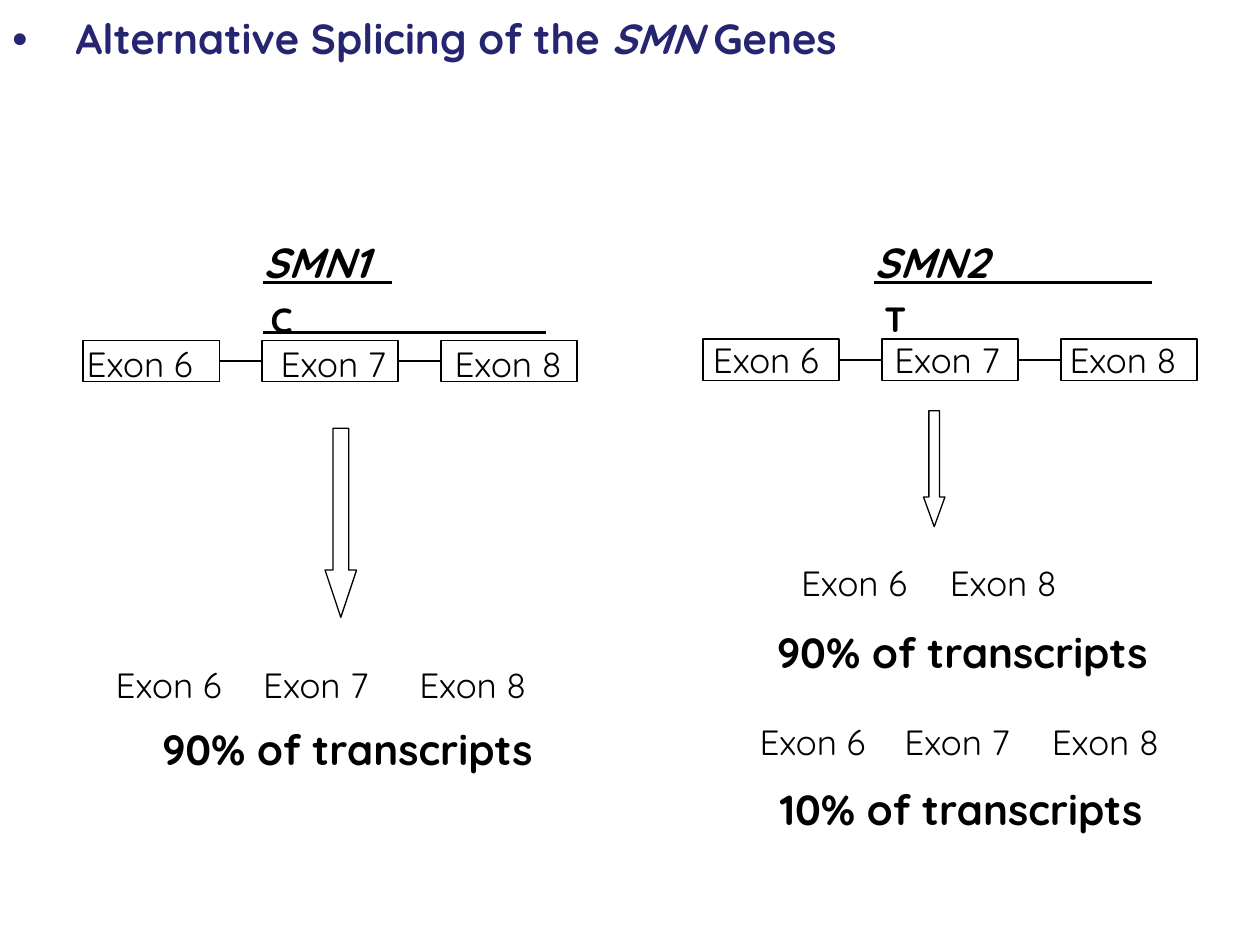
from lxml import etree
from pptx import Presentation
from pptx import util as u
from pptx.dml.color import RGBColor
from pptx.enum import shapes, text
from pptx.oxml.ns import qn

COLORS = {"title": "252571", "ink": "000000", "paper": "FFFFFF"}
FONT = "Quicksand"
COLS, ROWS = 100, 75
WIDTH, HEIGHT = u.Inches(10), u.Inches(7.5)

EXON_W, EXON_H, EXON_STEP = 10.8, 3.3, 14.2
EXON = {"size": 20}
STRONG = {"size": 24, "bold": True}
BASE = {"size": 20, "bold": True}
GENE = {"size": 24, "bold": True, "italic": True, "underline": True}


def grid(col, row):
    return round(col * WIDTH / COLS), round(row * HEIGHT / ROWS)


def box(col, row, cols, rows):
    return *grid(col, row), *grid(cols, rows)


def rgb(name):
    return RGBColor.from_string(COLORS[name])


def add_run(p, words, color="ink", **fmt):
    r = p.add_run()
    r.text = words
    r.font.name = FONT
    r.font.color.rgb = rgb(color)
    for name, value in fmt.items():
        setattr(r.font, name, u.Pt(value) if name == "size" else value)


def add_title(slide):
    sp = slide.shapes.title
    sp.left, sp.top, sp.width, sp.height = box(0, 0, 85, 6)
    tf = sp.text_frame
    tf.vertical_anchor = text.MSO_ANCHOR.MIDDLE
    tf.auto_size = text.MSO_AUTO_SIZE.NONE
    p = tf.paragraphs[0]
    p.alignment = text.PP_ALIGN.LEFT
    for words, italic in (("•\tAlternative Splicing of the ", False),
                          ("SMN ", True), ("Genes", False)):
        add_run(p, words, "title", size=24, bold=True, italic=italic)


def add_label(slide, words, col, row, cols, fmt):
    rows = 5 if fmt["size"] == 24 else 4.3
    tf = slide.shapes.add_textbox(*box(col, row, cols, rows)).text_frame
    tf.word_wrap = True
    tf.auto_size = text.MSO_AUTO_SIZE.SHAPE_TO_FIT_TEXT
    add_run(tf.paragraphs[0], words, **fmt)


def add_outline(slide, kind, *place, fill=None):
    sp = slide.shapes.add_shape(kind, *box(*place))
    sp.shadow.inherit = False
    if fill:
        sp.fill.solid()
        sp.fill.fore_color.rgb = rgb(fill)
    else:
        sp.fill.background()
    sp.line.color.rgb = rgb("ink")
    sp.line.width = u.Pt(0.75)
    return sp


def add_line(slide, start=(0, 0), end=(0, 0), weight=1):
    line = slide.shapes.add_connector(shapes.MSO_CONNECTOR.STRAIGHT,
                                      *grid(*start), *grid(*end))
    line.line.color.rgb = rgb("ink")
    line.line.width = u.Pt(weight)
    etree.SubElement(line._element.spPr, qn("a:effectLst"))
    return line


def add_gene(slide, col, row):
    """Three exon boxes in a row, joined by introns."""
    exons = [add_outline(slide, shapes.MSO_SHAPE.RECTANGLE,
                         col + i * EXON_STEP, row, EXON_W, EXON_H)
             for i in range(3)]
    for left, right in zip(exons, exons[1:]):
        intron = add_line(slide)
        intron.begin_connect(left, 3)
        intron.end_connect(right, 1)


def add_exon_labels(slide, row, places):
    for number, col in places.items():
        add_label(slide, f"Exon {number}", col, row, 12, EXON)


def add_arrow(slide, *place, head):
    sp = add_outline(slide, shapes.MSO_SHAPE.DOWN_ARROW, *place, fill="paper")
    sp.adjustments[0], sp.adjustments[1] = 0.5, head


def main():
    prs = Presentation()
    prs.slide_width, prs.slide_height = WIDTH, HEIGHT
    slide = prs.slides.add_slide(prs.slide_layouts[5])
    add_title(slide)

    add_gene(slide, 6.6, 27)
    add_gene(slide, 55.8, 26.9)

    for row, places in (
        (26.7, {6: 5.9, 7: 21.3, 8: 35.1}),
        (26.4, {6: 55.6, 7: 70, 8: 83.9}),
        (52.2, {6: 8.2, 7: 19.9, 8: 32.3}),
        (44.1, {6: 62.6, 8: 74.4}),
        (56.7, {6: 59.3, 7: 70.8, 8: 82.5}),
    ):
        add_exon_labels(slide, row, places)

    for words, col, row, cols, fmt in (
        ("SMN1", 19.9, 18.3, 13, GENE),
        ("SMN2", 68.4, 18.3, 13, GENE),
        ("C", 20.5, 23.2, 11.7, BASE),
        ("T", 69.2, 23.1, 13.3, BASE),
        ("90% of transcripts", 11.9, 56.9, 41.7, STRONG),
        ("90% of transcripts", 60.7, 49.2, 37.5, STRONG),
        ("10% of transcripts", 60.9, 61.7, 37.5, STRONG),
    ):
        add_label(slide, words, col, row, cols, fmt)

    for left, right, row in ((20.9, 31.1, 22.4), (69.4, 91.4, 22.4),
                             (20.9, 43.3, 26.4)):
        add_line(slide, (left, row), (right, row), 1.5)

    add_arrow(slide, 25.8, 34, 2.5, 15, head=1.5)
    add_arrow(slide, 73.3, 32.6, 1.7, 9.2, head=1.38)
    prs.save("out.pptx")


if __name__ == "__main__":
    main()
